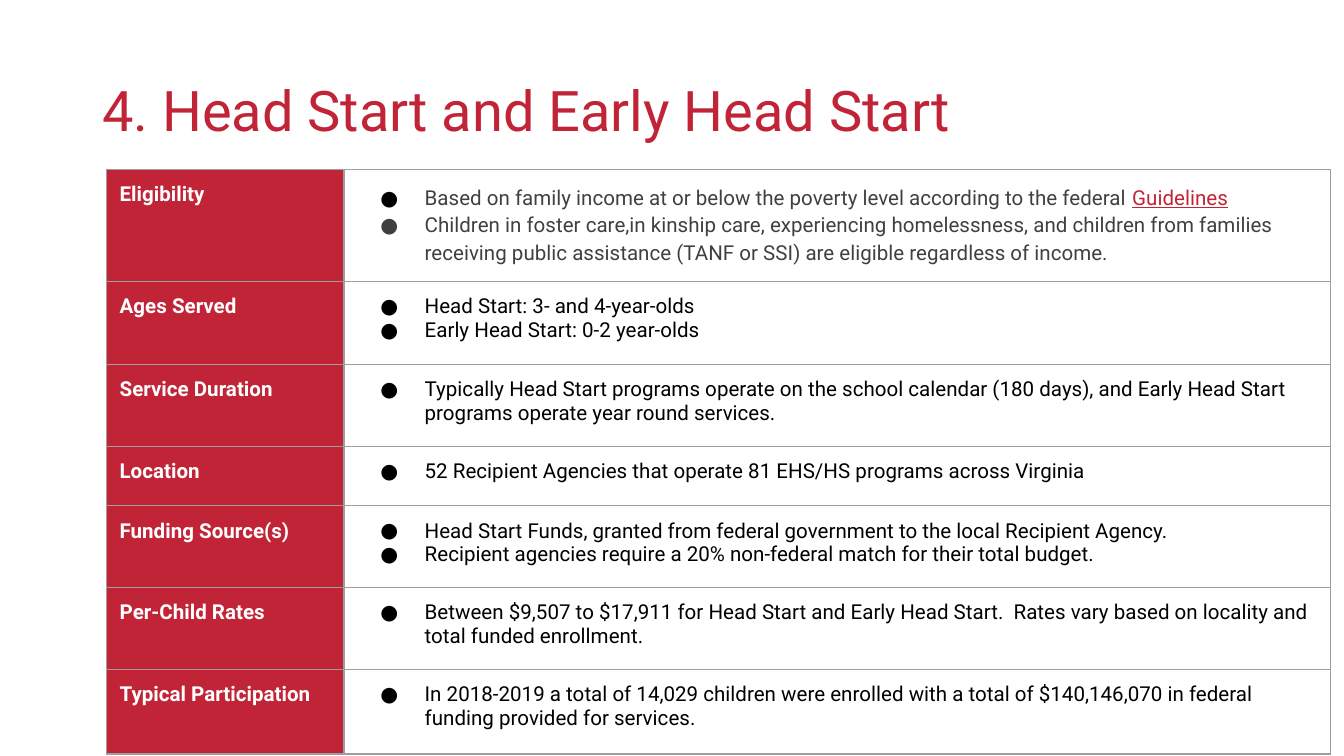
from dataclasses import dataclass

from lxml import etree
from pptx import Presentation
from pptx.dml.color import RGBColor
from pptx.enum import text
from pptx.oxml import ns
from pptx.util import Inches, Pt


@dataclass(frozen=True)
class Theme:
    font: str = "Roboto"
    red: str = "C12436"
    white: str = "FFFFFF"
    black: str = "000000"
    gray: str = "404040"
    border: str = "9E9E9E"
    title_size: int = 30
    table_size: int = 11
    border_width: float = 0.75


THEME = Theme()

TITLE = "4. Head Start and Early Head Start"
LINK = "Guidelines"
COLUMN_WIDTHS = (1.77, 7.34)

# Row height, label, bulleted details
ROWS = [
    (0.83, "Eligibility", [
        "Based on family income at or below the poverty level according to the federal Guidelines ",
        "Children in foster care,in kinship care, experiencing homelessness, and children from "
        "families receiving public assistance (TANF or SSI) are eligible regardless of income."]),
    (0.62, "Ages Served", [
        "Head Start: 3- and 4-year-olds",
        "Early Head Start: 0-2 year-olds"]),
    (0.61, "Service Duration", [
        "Typically Head Start programs operate on the school calendar (180 days), and Early "
        "Head Start programs operate year round services."]),
    (0.44, "Location", [
        "52 Recipient Agencies that operate 81 EHS/HS programs across Virginia"]),
    (0.61, "Funding Source(s)", [
        "Head Start Funds, granted from federal government to the local Recipient Agency.",
        "Recipient agencies require a 20% non-federal match for their total budget."]),
    (0.61, "Per-Child Rates", [
        "Between $9,507 to $17,911 for Head Start and Early Head Start.  Rates vary based on "
        "locality and total funded enrollment."]),
    (0.63, "Typical Participation", [
        "In 2018-2019 a total of 14,029 children were enrolled with a total of $140,146,070 "
        "in federal funding provided for services."]),
]


def style_font(font, size, color, bold=False):
    font.name = THEME.font
    font.size = Pt(size)
    font.bold = bold
    font.color.rgb = RGBColor.from_string(color)


def add_child(parent, tag, **attributes):
    return etree.SubElement(parent, ns.qn(tag), attributes)


def add_bullet(para, color):
    properties = para._p.get_or_add_pPr()
    properties.set("marL", str(Inches(0.5)))
    properties.set("indent", str(Inches(-0.33)))
    add_child(add_child(properties, "a:buClr"), "a:srgbClr", val=color)
    add_child(properties, "a:buSzPts", val=str(THEME.table_size * 100))
    add_child(properties, "a:buFont", typeface=THEME.font)
    add_child(properties, "a:buChar", char="●")


def add_borders(cell):
    properties = cell._tc.get_or_add_tcPr()
    for position, side in enumerate(("a:lnL", "a:lnR", "a:lnT", "a:lnB")):
        line = etree.Element(ns.qn(side), w=str(Pt(THEME.border_width)))
        add_child(add_child(line, "a:solidFill"), "a:srgbClr", val=THEME.border)
        properties.insert(position, line)


def style_cell(cell, fill):
    cell.fill.solid()
    cell.fill.fore_color.rgb = RGBColor.from_string(fill)
    cell.margin_left = cell.margin_right = Inches(0.1)
    cell.margin_top = cell.margin_bottom = Inches(0.1)
    add_borders(cell)


def fill_label(cell, label):
    style_cell(cell, THEME.red)
    para = cell.text_frame.paragraphs[0]
    para.add_run().text = label
    style_font(para.font, THEME.table_size, THEME.white, bold=True)


def add_linked_text(para, sentence):
    """Write a sentence, with its link word red and underlined."""
    for part in sentence.partition(LINK):
        span = para.add_run()
        span.text = part
        if part == LINK:
            span.font.color.rgb = RGBColor.from_string(THEME.red)
            span.font.underline = True


def fill_details(cell, details, color, line_spacing):
    style_cell(cell, THEME.white)
    frame = cell.text_frame
    for index, sentence in enumerate(details):
        para = frame.add_paragraph() if index else frame.paragraphs[0]
        add_bullet(para, color if index else THEME.black)
        para.line_spacing = line_spacing
        style_font(para.font, THEME.table_size, color)
        if LINK in sentence:
            add_linked_text(para, sentence)
        else:
            para.add_run().text = sentence


def add_title(page):
    box = page.shapes.add_textbox(Inches(0.69), Inches(0.3), Inches(8.62), Inches(1.09))
    frame = box.text_frame
    frame.word_wrap = True
    frame.vertical_anchor = text.MSO_ANCHOR.MIDDLE
    frame.margin_left = frame.margin_right = Inches(0.07)
    frame.margin_top = frame.margin_bottom = Inches(0.04)
    para = frame.paragraphs[0]
    para.line_spacing = 0.9
    para.add_run().text = TITLE
    style_font(para.font, THEME.title_size, THEME.red)


def add_program_table(page):
    width = sum(COLUMN_WIDTHS)
    height = sum(row[0] for row in ROWS)
    table = page.shapes.add_table(len(ROWS), len(COLUMN_WIDTHS), Inches(0.79), Inches(1.26),
                                  Inches(width), Inches(height)).table
    table.first_row = table.horz_banding = False
    for column, column_width in zip(table.columns, COLUMN_WIDTHS):
        column.width = Inches(column_width)
    for index, (row_height, label, details) in enumerate(ROWS):
        table.rows[index].height = Inches(row_height)
        fill_label(table.cell(index, 0), label)
        # The eligibility row is gray and more widely spaced
        color, spacing = (THEME.black, 1.0) if index else (THEME.gray, 1.15)
        fill_details(table.cell(index, 1), details, color, spacing)


def main():
    deck = Presentation()
    # Widescreen page, 16:9
    deck.slide_width = Inches(10)
    deck.slide_height = deck.slide_width * 9 // 16
    page = deck.slides.add_slide(deck.slide_layouts[6])
    add_title(page)
    add_program_table(page)
    deck.save("out.pptx")


if __name__ == "__main__":
    main()
